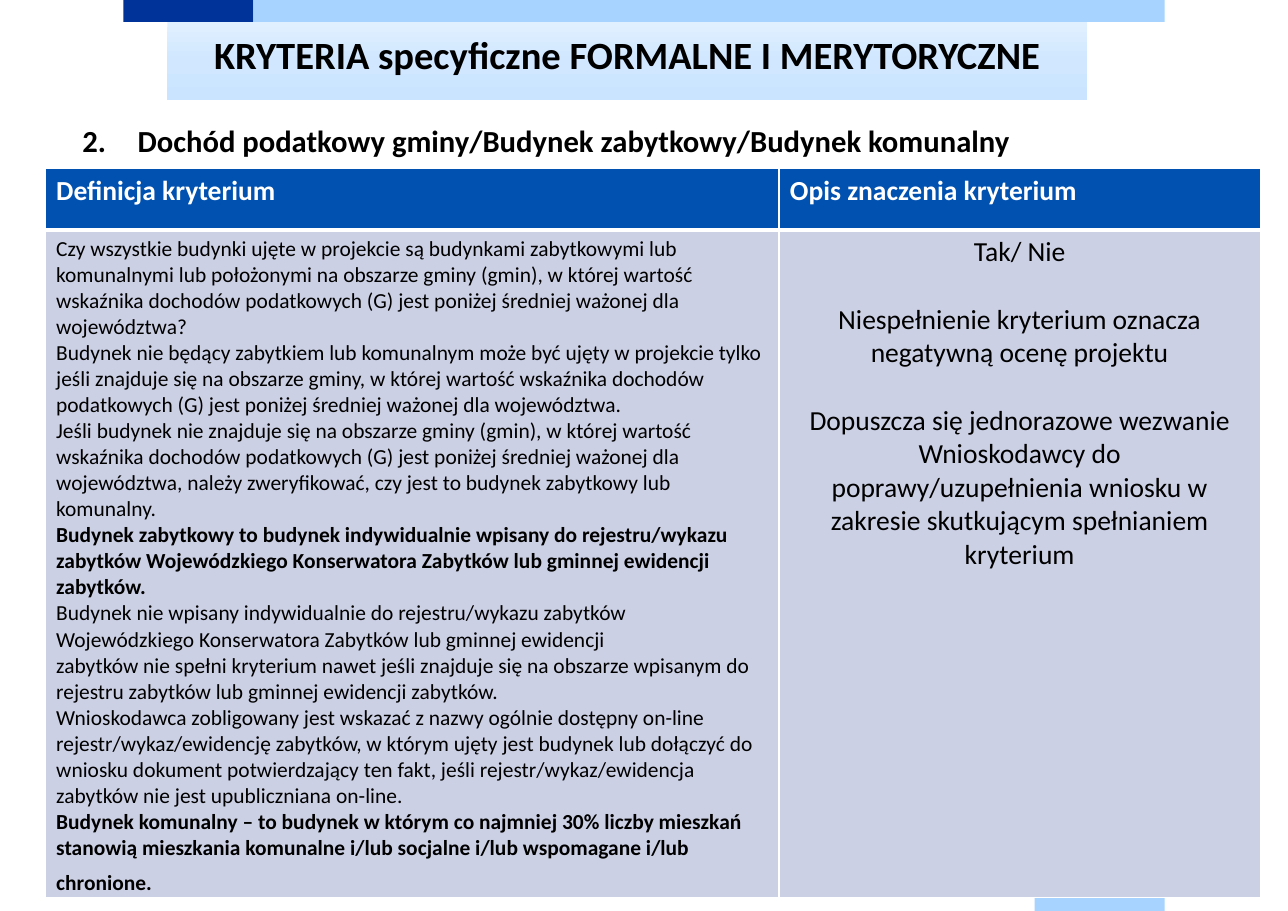
from copy import deepcopy

from lxml import etree
from pptx import Presentation
from pptx import util as u
from pptx.dml.color import RGBColor
from pptx.enum import shapes, text
from pptx.oxml import ns

PX = 9144  # EMU in one px, 100 px to the inch
FONT = "Calibri"
BLACK = RGBColor(0x00, 0x00, 0x00)
WHITE = RGBColor(0xFF, 0xFF, 0xFF)
NAVY = RGBColor(0x00, 0x33, 0x99)
SKY = RGBColor(0xA6, 0xD3, 0xFF)
HEADER_BLUE = RGBColor(0x00, 0x51, 0xB0)
BODY_LILAC = RGBColor(0xCC, 0xD0, 0xE4)
TITLE_STOPS = [
    (0, RGBColor(0xE1, 0xF0, 0xFF)),
    (0.5, RGBColor(0xD0, 0xE7, 0xFF)),
    (1, RGBColor(0xCA, 0xE4, 0xFF)),
]

# Paragraphs of the definition: text, bold
DEFINITION = [
    ("Czy wszystkie budynki ujęte w projekcie są budynkami zabytkowymi lub komunalnymi "
     "lub położonymi na obszarze gminy (gmin), w której wartość wskaźnika dochodów "
     "podatkowych (G) jest poniżej średniej ważonej dla województwa?", False),
    ("Budynek nie będący zabytkiem lub komunalnym może być ujęty w projekcie tylko jeśli "
     "znajduje się na obszarze gminy, w której wartość wskaźnika dochodów podatkowych (G) "
     "jest poniżej średniej ważonej dla województwa.", False),
    ("Jeśli budynek nie znajduje się na obszarze gminy (gmin), w której wartość wskaźnika "
     "dochodów podatkowych (G) jest poniżej średniej ważonej dla województwa, należy "
     "zweryfikować, czy jest to budynek zabytkowy lub komunalny.", False),
    ("Budynek zabytkowy to budynek indywidualnie wpisany do rejestru/wykazu zabytków "
     "Wojewódzkiego Konserwatora Zabytków lub gminnej ewidencji zabytków.", True),
    ("Budynek nie wpisany indywidualnie do rejestru/wykazu zabytków Wojewódzkiego "
     "Konserwatora Zabytków lub gminnej ewidencji", False),
    ("zabytków nie spełni kryterium nawet jeśli znajduje się na obszarze wpisanym do "
     "rejestru zabytków lub gminnej ewidencji zabytków.", False),
    ("Wnioskodawca zobligowany jest wskazać z nazwy ogólnie dostępny on-line "
     "rejestr/wykaz/ewidencję zabytków, w którym ujęty jest budynek lub dołączyć do "
     "wniosku dokument potwierdzający ten fakt, jeśli rejestr/wykaz/ewidencja zabytków "
     "nie jest upubliczniana on-line.", False),
    ("Budynek komunalny – to budynek w którym co najmniej 30% liczby mieszkań stanowią "
     "mieszkania komunalne i/lub socjalne i/lub wspomagane i/lub chronione. ", True),
]
MEANING = [
    "Tak/ Nie",
    "Niespełnienie kryterium oznacza negatywną ocenę projektu",
    "Dopuszcza się jednorazowe wezwanie Wnioskodawcy do poprawy/uzupełnienia wniosku "
    "w zakresie skutkującym spełnianiem kryterium",
]


def emu(box):
    return [length * PX for length in box]


def add_run(paragraph, words, size, color=BLACK, bold=False):
    run = paragraph.add_run()
    run.text = words
    run.font.name = FONT
    run.font.size = u.Pt(size)
    run.font.bold = bold
    run.font.color.rgb = color


def next_paragraph(frame, index):
    return frame.paragraphs[0] if index == 0 else frame.add_paragraph()


def add_bar(slide, box, color):
    bar = slide.shapes.add_shape(shapes.MSO_SHAPE.RECTANGLE, *emu(box))
    bar.shadow.inherit = False
    bar.fill.solid()
    bar.fill.fore_color.rgb = color
    bar.line.fill.background()


def add_edge_bars(slide, box):
    """Place the bars along the top and bottom edges of the box."""
    left, top, width, height = box
    thick, short = 20, 118
    add_bar(slide, (left, top, short, thick), NAVY)
    add_bar(slide, (left + short, top, width - short, thick), SKY)
    add_bar(slide, (left + width - short, top + height - thick, short, thick), SKY)


def fill_title_gradient(title):
    title.fill.gradient()
    title.fill.gradient_angle = 270
    last_stop = title.fill._fill._gradFill.gsLst[-1]
    last_stop.addprevious(deepcopy(last_stop))
    for stop, (position, color) in zip(title.fill.gradient_stops, TITLE_STOPS):
        stop.position = position
        stop.color.rgb = color


def set_title(slide, box):
    title = slide.shapes.title
    title.left, title.top, title.width, title.height = emu(box)
    fill_title_gradient(title)
    frame = title.text_frame
    frame.margin_left = frame.margin_top = frame.margin_right = frame.margin_bottom = 0
    frame.vertical_anchor = text.MSO_ANCHOR.TOP
    frame.auto_size = text.MSO_AUTO_SIZE.NONE
    paragraph = frame.paragraphs[0]
    paragraph.alignment = text.PP_ALIGN.CENTER
    paragraph.line_spacing = u.Pt(36)
    add_run(paragraph, "KRYTERIA specyficzne FORMALNE I MERYTORYCZNE", 25.2, bold=True)


def add_criterion_heading(slide, box):
    frame = slide.shapes.add_textbox(*emu(box)).text_frame
    frame.word_wrap = True
    paragraph = frame.paragraphs[0]
    properties = paragraph._p.get_or_add_pPr()
    properties.set("marL", str(50 * PX))
    properties.set("indent", str(-50 * PX))
    etree.SubElement(properties, ns.qn("a:buFont"), typeface="+mj-lt")
    etree.SubElement(properties, ns.qn("a:buAutoNum"), type="arabicPeriod", startAt="2")
    add_run(paragraph, "Dochód podatkowy gminy/Budynek zabytkowy/Budynek komunalny",
            20, bold=True)


def style_cell(cell, color, bottom_width):
    """Give the cell white borders and a plain fill."""
    properties = cell._tc.get_or_add_tcPr()
    for side, width in (("L", 1), ("R", 1), ("T", 1), ("B", bottom_width)):
        line = etree.SubElement(properties, ns.qn(f"a:ln{side}"), w=str(u.Pt(width)))
        fill = etree.SubElement(line, ns.qn("a:solidFill"))
        etree.SubElement(fill, ns.qn("a:srgbClr"), val=str(WHITE))
    cell.fill.solid()
    cell.fill.fore_color.rgb = color


def add_criterion_table(slide, box):
    left, top, width, height = box
    header_height, definition_width = 56, 666
    table = slide.shapes.add_table(2, 2, *emu(box)).table
    table.columns[0].width = definition_width * PX
    table.columns[1].width = (width - definition_width) * PX
    table.rows[0].height = header_height * PX
    table.rows[1].height = (height - header_height) * PX

    for column, heading in enumerate(("Definicja kryterium", "Opis znaczenia kryterium")):
        header = table.cell(0, column)
        style_cell(header, HEADER_BLUE, 3)
        style_cell(table.cell(1, column), BODY_LILAC, 1)
        add_run(header.text_frame.paragraphs[0], heading, 18, WHITE, True)

    definition = table.cell(1, 0).text_frame
    for index, (words, bold) in enumerate(DEFINITION):
        paragraph = next_paragraph(definition, index)
        add_run(paragraph, words, 14, bold=bold)
    add_run(paragraph, "\t", 19.8)

    meaning = table.cell(1, 1).text_frame
    for index, words in enumerate(MEANING):
        paragraph = next_paragraph(meaning, index)
        paragraph.alignment = text.PP_ALIGN.CENTER
        if index:
            paragraph.space_before = u.Pt(22)
        add_run(paragraph, words, 18)


def main():
    presentation = Presentation()
    presentation.slide_width, presentation.slide_height = emu((1169, 827))
    slide = presentation.slides.add_slide(presentation.slide_layouts[5])
    add_edge_bars(slide, (112, 0, 945, 827))
    set_title(slide, (152, 20, 835, 71))
    add_criterion_heading(slide, (65, 106, 1039, 44))
    add_criterion_table(slide, (41, 153, 1103, 662))
    presentation.save("out.pptx")


if __name__ == "__main__":
    main()
